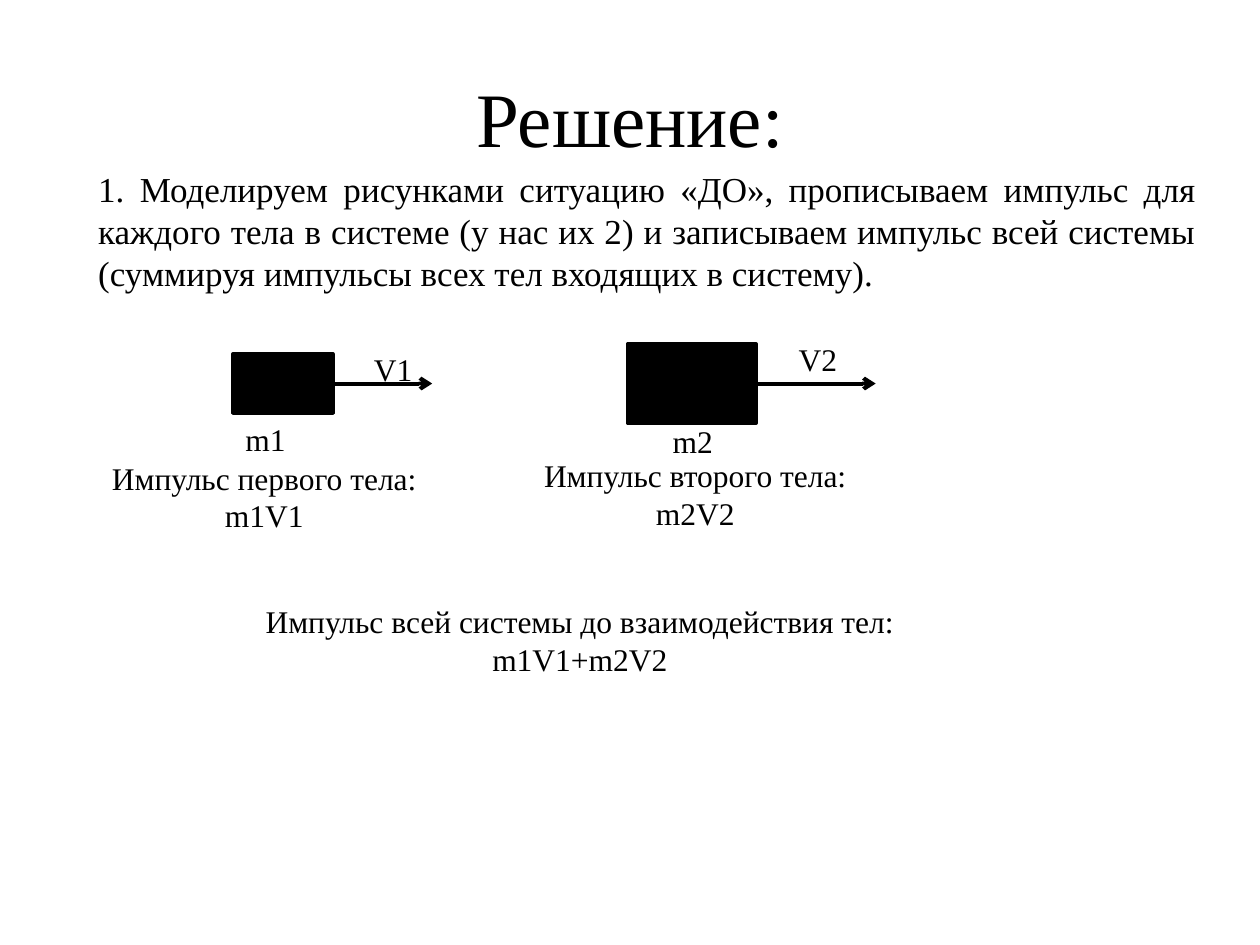
import dataclasses

import pptx
import pptx.dml.color
import pptx.enum.shapes
import pptx.enum.text
import pptx.oxml
import pptx.oxml.ns
import pptx.util

Pt = pptx.util.Pt
ALIGN = pptx.enum.text.PP_ALIGN
ANCHOR = pptx.enum.text.MSO_ANCHOR
RIGHT_SIDE = 3


@dataclasses.dataclass(frozen=True)
class Theme:
    font: str = "Times New Roman"
    ink: pptx.dml.color.RGBColor = pptx.dml.color.RGBColor(0, 0, 0)
    title_size: int = 44
    body_size: int = 20
    label_size: int = 18
    outline: float = 2
    arrow: float = 2.25


class SlideBuilder:
    def __init__(self, slide, theme):
        self.slide = slide
        self.theme = theme

    def text(self, paragraphs, left, top, width, height, size,
             wrap=True, grow=False, anchor=ANCHOR.TOP):
        """Add a text box from (text, alignment) pairs."""
        box = self.slide.shapes.add_textbox(Pt(left), Pt(top), Pt(width), Pt(height))
        frame = box.text_frame
        frame.word_wrap = wrap
        frame.vertical_anchor = anchor
        if grow:
            frame.auto_size = pptx.enum.text.MSO_AUTO_SIZE.SHAPE_TO_FIT_TEXT
        for index, (words, align) in enumerate(paragraphs):
            paragraph = frame.add_paragraph() if index else frame.paragraphs[0]
            paragraph.alignment = align
            run = paragraph.add_run()
            run.text = words
            run.font.name = self.theme.font
            run.font.size = Pt(size)
            run.font.color.rgb = self.theme.ink

    def label(self, words, left, top, width, wrap):
        self.text([(words, ALIGN.LEFT)], left, top, width, 29,
                  self.theme.label_size, wrap=wrap, grow=True)

    def formula(self, caption, expression, left, top, width):
        self.text([(caption, ALIGN.LEFT), (expression, ALIGN.CENTER)],
                  left, top, width, 51, self.theme.label_size, wrap=False, grow=True)

    def body(self, left, middle, width, height):
        """Add a solid block centred on the line of motion."""
        block = self.slide.shapes.add_shape(
            pptx.enum.shapes.MSO_SHAPE.RECTANGLE,
            Pt(left), Pt(middle - height / 2), Pt(width), Pt(height))
        block.shadow.inherit = False
        block.fill.solid()
        block.fill.fore_color.rgb = self.theme.ink
        block.line.color.rgb = self.theme.ink
        block.line.width = Pt(self.theme.outline)
        return block

    def velocity(self, block, end, middle):
        """Add an arrow from the right side of a block."""
        arrow = self.slide.shapes.add_connector(
            pptx.enum.shapes.MSO_CONNECTOR.STRAIGHT,
            block.left + block.width, Pt(middle), Pt(end), Pt(middle))
        arrow.begin_connect(block, RIGHT_SIDE)
        arrow.line.color.rgb = self.theme.ink
        arrow.line.width = Pt(self.theme.arrow)
        head = pptx.oxml.parse_xml(
            f'<a:tailEnd {pptx.oxml.ns.nsdecls("a")} type="arrow"/>')
        arrow.line._get_or_add_ln().append(head)
        properties = arrow._element.spPr
        properties.append(pptx.oxml.parse_xml(
            f'<a:effectLst {pptx.oxml.ns.nsdecls("a")}/>'))


def main():
    presentation = pptx.Presentation()
    presentation.slide_width = Pt(720)
    presentation.slide_height = Pt(540)
    theme = Theme()
    builder = SlideBuilder(
        presentation.slides.add_slide(presentation.slide_layouts[6]), theme)

    # Heading and the step being explained
    builder.text([("Решение:", ALIGN.CENTER)], 36, 21.6, 648, 90,
                 theme.title_size, anchor=ANCHOR.MIDDLE)
    step = ("1. Моделируем рисунками ситуацию «ДО», прописываем импульс для "
            "каждого тела в системе (у нас их 2) и записываем импульс всей "
            "системы (суммируя импульсы всех тел входящих в систему).")
    builder.text([(step, ALIGN.JUSTIFY)], 49, 92.2, 641.5, 90, theme.body_size)

    # Two moving bodies: block, arrow end, mass, velocity and momentum places
    motion_line = 219.2
    bodies = [
        (1, "первого", (133.2, 57, 34), 247, (133.2, 236.2), (206.6, 196.6),
         (56.9, 258.5, 190)),
        (2, "второго", (358.6, 73.4, 45.4), 500.4, (377.3, 237.6), (449.3, 190.8),
         (303.8, 257, 193.7)),
    ]
    for number, ordinal, (left, width, height), tip, mass, speed, momentum in bodies:
        block = builder.body(left, motion_line, width, height)
        builder.velocity(block, tip, motion_line)
        builder.label(f"m{number}", *mass, 44, wrap=True)
        builder.label(f"V{number}", *speed, 36.7, wrap=False)
        builder.formula(f"Импульс {ordinal} тела:", f"m{number}V{number}", *momentum)

    # Momentum of the whole system
    builder.formula("Импульс всей системы до взаимодействия тел:", "m1V1+m2V2",
                    144.7, 340.6, 378.7)

    presentation.save("out.pptx")


if __name__ == "__main__":
    main()
